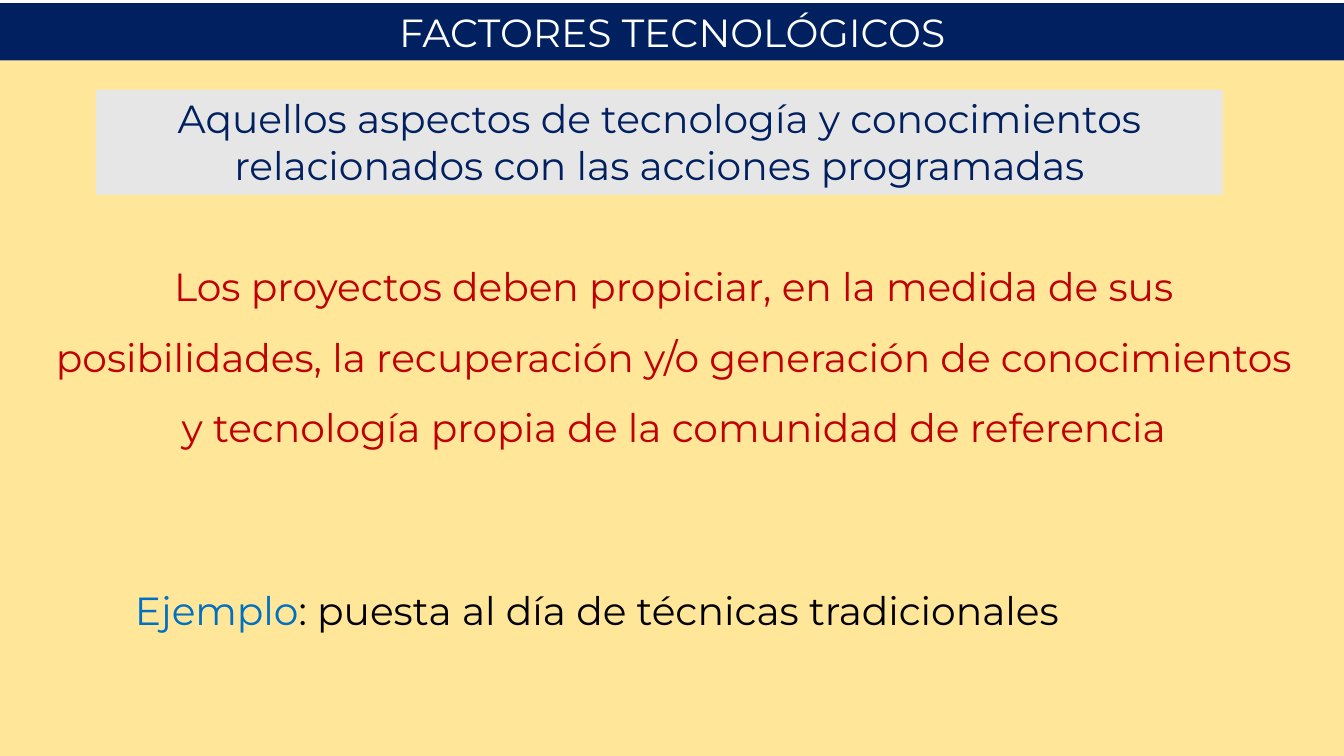
import pptx
import pptx.dml.color
import pptx.enum.shapes
import pptx.enum.text
import pptx.util

Pt = pptx.util.Pt
ALIGN = pptx.enum.text.PP_ALIGN

SLIDE_SIZE = (960, 540)
FONT = "Montserrat"
FONT_SIZE = 28

# left, top, width, height, fill, line spacing, alignment, [(text, colour), ...]
BLOCKS = [
    (0, 43.2, 960, 509, "FFE699", 1, ALIGN.CENTER, []),
    (0, 2.2, 960, 41, "002060", 1, ALIGN.CENTER,
     [("FACTORES TECNOLÓGICOS", "FFFFFF")]),
    (68.4, 64, 805, 75, "E7E6E6", 1, ALIGN.CENTER,
     [("Aquellos aspectos de tecnología y conocimientos relacionados "
       "con las acciones programadas", "002060")]),
    (28, 167, 906.5, 211, None, 1.5, ALIGN.CENTER,
     [("Los proyectos deben propiciar, en la medida de sus posibilidades, "
       "la recuperación y/o generación de conocimientos y tecnología propia "
       "de la comunidad de referencia", "C00000")]),
    (89.3, 415.4, 775, 41, None, 1, ALIGN.LEFT,
     [("Ejemplo", "0070C0"),
      (": puesta al día de técnicas tradicionales", "000000")]),
]


def colour(value):
    return pptx.dml.color.RGBColor.from_string(value)


def add_block(page, left, top, width, height, fill, spacing, align, spans):
    """Add a filled rectangle, or a plain text box when there is no fill."""
    place = [Pt(length) for length in (left, top, width, height)]
    if fill:
        box = page.shapes.add_shape(
            pptx.enum.shapes.MSO_SHAPE.RECTANGLE, *place)
        box.shadow.inherit = False
        box.fill.solid()
        box.fill.fore_color.rgb = colour(fill)
        box.line.fill.background()
    else:
        box = page.shapes.add_textbox(*place)
    if not spans:
        return
    frame = box.text_frame
    frame.word_wrap = True
    frame.vertical_anchor = pptx.enum.text.MSO_ANCHOR.TOP
    para = frame.paragraphs[0]
    para.alignment = align
    para.line_spacing = spacing
    for text, text_colour in spans:
        span = para.add_run()
        span.text = text
        span.font.name = FONT
        span.font.size = Pt(FONT_SIZE)
        span.font.color.rgb = colour(text_colour)


def main():
    deck = pptx.Presentation()
    deck.slide_width, deck.slide_height = [Pt(side) for side in SLIDE_SIZE]
    page = deck.slides.add_slide(deck.slide_layouts[6])
    for block in BLOCKS:
        add_block(page, *block)
    deck.save("out.pptx")


if __name__ == "__main__":
    main()
